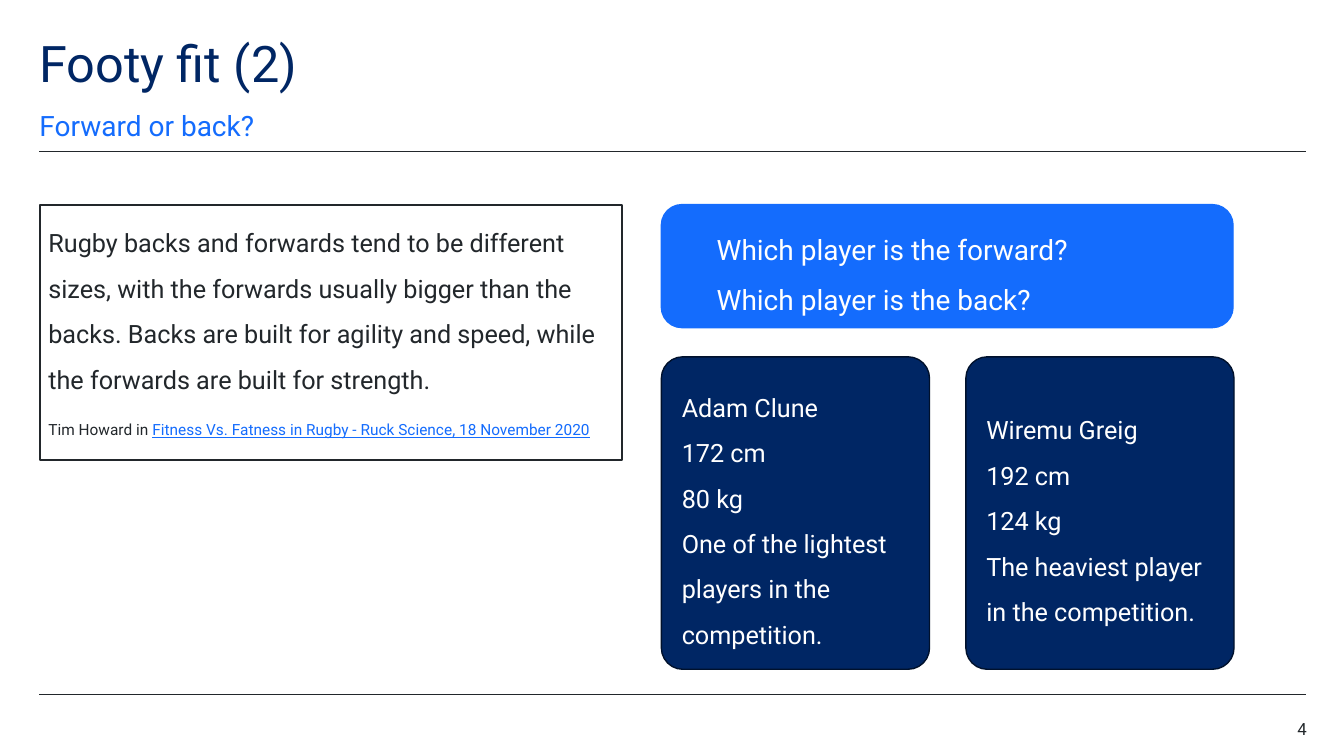
from lxml import etree
from pptx import Presentation
from pptx.dml.color import RGBColor
from pptx.enum.shapes import MSO_CONNECTOR, MSO_SHAPE
from pptx.enum.text import MSO_ANCHOR, MSO_AUTO_SIZE, PP_ALIGN
from pptx.oxml.ns import qn
from pptx.util import Inches, Pt

RECT, ROUNDED = MSO_SHAPE.RECTANGLE, MSO_SHAPE.ROUNDED_RECTANGLE
STRAIGHT = MSO_CONNECTOR.STRAIGHT
TOP, MIDDLE, BOTTOM = MSO_ANCHOR.TOP, MSO_ANCHOR.MIDDLE, MSO_ANCHOR.BOTTOM
LEFT, RIGHT = PP_ALIGN.LEFT, PP_ALIGN.RIGHT
NO_AUTOFIT = MSO_AUTO_SIZE.NONE

NAVY = RGBColor(0x00, 0x26, 0x64)
DARK_NAVY = RGBColor(0x00, 0x11, 0x2C)
BLUE = RGBColor(0x14, 0x6C, 0xFD)
INK = RGBColor(0x22, 0x27, 0x2B)
WHITE = RGBColor(0xFF, 0xFF, 0xFF)


def add_text(p, text, size, color, align=LEFT, spacing=1.5, before=0, after=0,
             indent=0, underline=False):
    """Add a formatted run to a paragraph and set the paragraph's layout."""
    pPr = p._p.get_or_add_pPr()
    pPr.set("marL", str(Inches(indent)))
    pPr.set("indent", "0")
    if pPr.find(qn("a:buNone")) is None:
        etree.SubElement(pPr, qn("a:buNone"))
    p.alignment, p.line_spacing = align, spacing
    p.space_before, p.space_after = Pt(before), Pt(after)
    r = p.add_run()
    r.text = text
    r.font.name, r.font.size = "Roboto", Pt(size)
    r.font.color.rgb, r.font.underline = color, underline


class SlideBuilder:
    """Draws elements on one slide in a shared style."""

    def __init__(self, prs):
        self.slide = prs.slides.add_slide(prs.slide_layouts[1])
        self.shapes = self.slide.shapes

    def frame(self, sp, anchor, inset_x=0, inset_y=0):
        tf = sp.text_frame
        tf.word_wrap, tf.auto_size = True, NO_AUTOFIT
        tf.vertical_anchor = anchor
        tf.margin_left = tf.margin_right = Inches(inset_x)
        tf.margin_top = tf.margin_bottom = Inches(inset_y)
        return tf

    def placeholder(self, index, box, text, anchor, **fmt):
        sp = self.slide.placeholders[index]
        sp.left, sp.top, sp.width, sp.height = map(Inches, box)
        add_text(self.frame(sp, anchor).paragraphs[0], text, **fmt)

    def rule(self, y):
        line = self.shapes.add_connector(
            STRAIGHT, Inches(0.39), Inches(y), Inches(12.95), Inches(y))
        line.line.color.rgb, line.line.width = INK, Pt(0.5)
        etree.SubElement(line._element.spPr, qn("a:effectLst"))

    def panel(self, kind, box, line, width=1, fill=None, radius=None):
        sp = self.shapes.add_shape(kind, *map(Inches, box))
        sp.shadow.inherit = False
        if fill is None:
            sp.fill.background()
        else:
            sp.fill.solid()
            sp.fill.fore_color.rgb = fill
        sp.line.color.rgb, sp.line.width = line, Pt(width)
        if radius is not None:
            sp.adjustments[0] = radius
        return sp

    def lines(self, tf, texts, **fmt):
        for i, text in enumerate(texts):
            p = tf.add_paragraph() if i else tf.paragraphs[0]
            add_text(p, text, **fmt)

    def label(self, box, text, **fmt):
        sp = self.shapes.add_textbox(*map(Inches, box))
        add_text(self.frame(sp, TOP).paragraphs[0], text, **fmt)


def main():
    prs = Presentation()
    prs.slide_width, prs.slide_height = Inches(13.33), Inches(7.5)
    s = SlideBuilder(prs)

    # Heading and rules
    s.placeholder(0, (0.39, 0.39, 11.02, 0.6), "Footy fit (2)", TOP,
                  size=36, color=NAVY, spacing=0.9)
    s.placeholder(1, (0.39, 1.07, 11.02, 0.34), "Forward or back?", BOTTOM,
                  size=20, color=BLUE, after=12)
    for y in (1.5, 6.89):
        s.rule(y)

    # Quotation with its source
    quote = s.panel(RECT, (0.4, 2.03, 5.77, 2.53), INK, width=1.5)
    tf = s.frame(quote, TOP, 0.08, 0.08)
    add_text(tf.paragraphs[0],
             "Rugby backs and forwards tend to be different sizes, with the "
             "forwards usually bigger than the backs. Backs are built for agility "
             "and speed, while the forwards are built for strength.",
             size=18, color=INK, after=6)
    credit = tf.add_paragraph()
    add_text(credit, "Tim Howard in ", size=11, color=INK, before=6, after=6)
    add_text(credit, "Fitness Vs. Fatness in Rugby - Ruck Science, 18 November 2020",
             size=11, color=BLUE, before=6, after=6, underline=True)

    # Questions
    questions = s.panel(ROUNDED, (6.56, 2.03, 5.67, 1.22), BLUE, fill=BLUE)
    s.lines(s.frame(questions, MIDDLE, 0.1, 0.05),
            ["Which player is the forward?", "Which player is the back?"],
            size=20, color=WHITE, indent=0.39)

    # Player cards
    players = [
        ("Adam Clune", "172 cm", "80 kg",
         "One of the lightest players in the competition."),
        ("Wiremu Greig", "192 cm", "124 kg",
         "The heaviest player in the competition."),
    ]
    for i, facts in enumerate(players):
        card = s.panel(ROUNDED, (6.56 + 3.02 * i, 3.54, 2.66, 3.1), DARK_NAVY,
                       fill=NAVY, radius=0.08)
        s.lines(s.frame(card, MIDDLE, 0.04, 0.04), facts,
                size=18, color=WHITE, indent=0.1)

    # Page number
    s.label((12.17, 7.13, 0.79, 0.2), "4", size=12, color=INK,
            align=RIGHT, spacing=1.0)

    prs.save("out.pptx")


if __name__ == "__main__":
    main()
